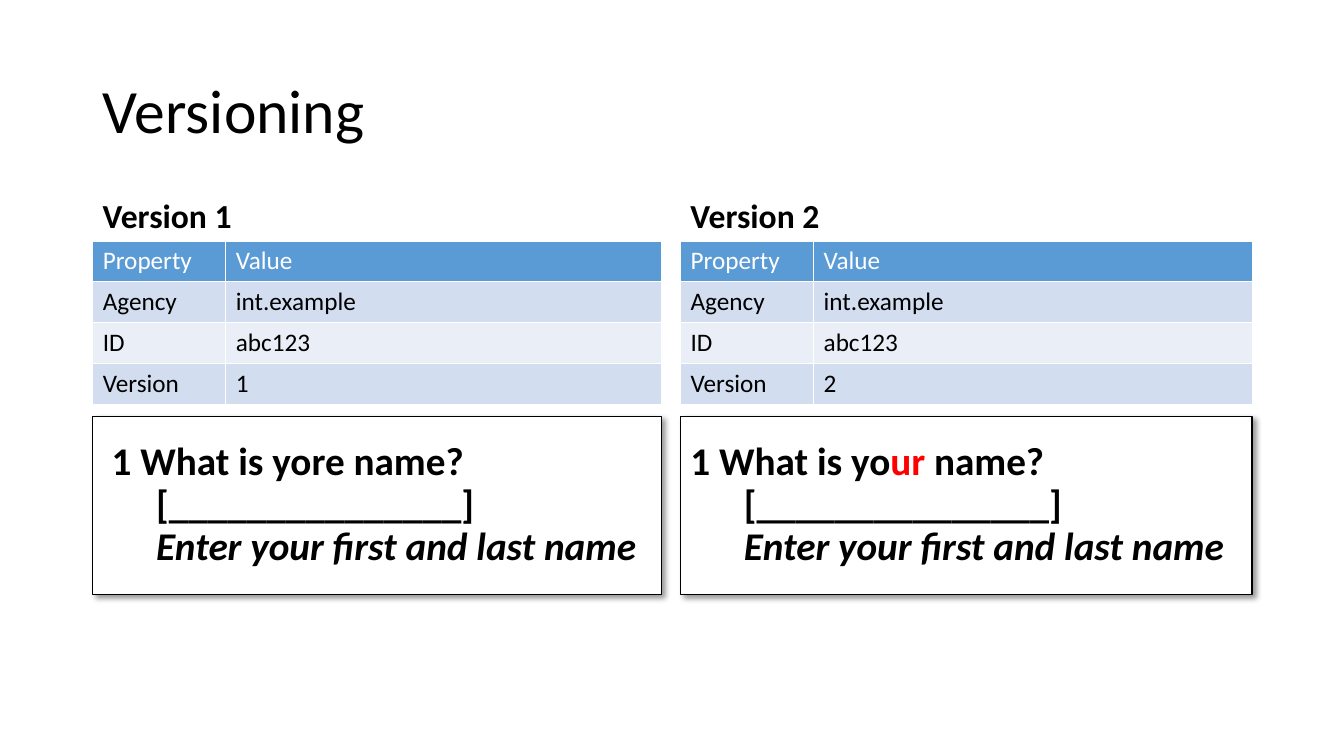
"""Build a slide that compares two versions of a survey question."""
from lxml import etree
from pptx import Presentation, util as u
from pptx.dml.color import RGBColor
from pptx.enum import shapes, text
from pptx.oxml import ns

COLOURS = {
    "black": "000000",
    "white": "FFFFFF",
    "red": "FF0000",
    "header": "5B9BD5",
    "odd_row": "D2DEEF",
    "even_row": "EAEFF7",
}
FONT = "Calibri"
PROPERTY_WIDTH = 1.32
HANGING = 0.53
BLANK = ("[_______________]", {})
HINT = ("Enter your first and last name", {"italic": True})


def colour(name):
    return RGBColor.from_string(COLOURS[name])


def style_run(run, size, name="black", bold=False, italic=False):
    font = run.font
    font.name, font.size = FONT, u.Pt(size)
    font.bold, font.italic = bold, italic
    font.color.rgb = colour(name)


def prepare_frame(shape, anchor, space_before=0):
    frame = shape.text_frame
    frame.word_wrap = True
    frame.auto_size = text.MSO_AUTO_SIZE.NONE
    frame.vertical_anchor = anchor
    paragraph = frame.paragraphs[0]
    paragraph.alignment = text.PP_ALIGN.LEFT
    paragraph.line_spacing = 0.9
    paragraph.space_before = u.Pt(space_before)
    return paragraph


def add_title(slide, words):
    title = slide.shapes.title
    title.left, title.top = u.Inches(0.92), u.Inches(0.4)
    title.width, title.height = u.Inches(11.5), u.Inches(1.45)
    title.text_frame.text = words
    paragraph = prepare_frame(title, text.MSO_ANCHOR.MIDDLE)
    style_run(paragraph.runs[0], 44)


def add_heading(slide, words, left, width):
    box = slide.shapes.add_textbox(
        u.Inches(left), u.Inches(1.49), u.Inches(width), u.Inches(0.9))
    box.text_frame.text = words
    paragraph = prepare_frame(box, text.MSO_ANCHOR.BOTTOM, 10)
    style_run(paragraph.runs[0], 24, bold=True)


def add_property_table(slide, rows, left, width):
    height = u.Inches(1.62)
    table = slide.shapes.add_table(
        len(rows), 2, u.Inches(left), u.Inches(2.39), u.Inches(width), height).table
    table.columns[0].width = u.Inches(PROPERTY_WIDTH)
    table.columns[1].width = u.Inches(width - PROPERTY_WIDTH)
    for row_index, values in enumerate(rows):
        table.rows[row_index].height = height // len(rows)
        band = "odd_row" if row_index % 2 else "even_row"
        for column_index, value in enumerate(values):
            cell = table.cell(row_index, column_index)
            cell.fill.solid()
            cell.fill.fore_color.rgb = colour(band if row_index else "header")
            cell.text_frame.text = value
            run = cell.text_frame.paragraphs[0].runs[0]
            style_run(run, 18, "black" if row_index else "white")


def add_shadow(shape):
    effects = etree.SubElement(shape._element.spPr, ns.qn("a:effectLst"))
    shadow = etree.SubElement(
        effects, ns.qn("a:outerShdw"), blurRad=str(u.Pt(4)), dist=str(u.Pt(3)),
        dir="2700000", algn="tl", rotWithShape="0")
    shade = etree.SubElement(shadow, ns.qn("a:srgbClr"), val=COLOURS["black"])
    etree.SubElement(shade, ns.qn("a:alpha"), val="40000")


def add_question(slide, lines, left, width, first_indent):
    box = slide.shapes.add_shape(
        shapes.MSO_SHAPE.RECTANGLE, u.Inches(left), u.Inches(4.13),
        u.Inches(width), u.Inches(1.77))
    box.fill.solid()
    box.fill.fore_color.rgb = colour("white")
    box.line.color.rgb = colour("black")
    box.line.width = u.Pt(1)
    add_shadow(box)
    paragraph = prepare_frame(box, text.MSO_ANCHOR.MIDDLE, 10)
    properties = paragraph._p.get_or_add_pPr()
    properties.set("marL", str(u.Inches(HANGING)))
    properties.set("indent", str(u.Inches(first_indent - HANGING)))
    for index, pieces in enumerate(lines):
        if index:
            paragraph.add_line_break()
        for words, emphasis in pieces:
            run = paragraph.add_run()
            run.text = words
            style_run(run, 28, bold=True, **emphasis)


def add_version(slide, number, left, width, question, first_indent):
    rows = [("Property", "Value"), ("Agency", "int.example"),
            ("ID", "abc123"), ("Version", number)]
    add_heading(slide, f"Version {number}", left, width)
    add_question(slide, [question, [BLANK], [HINT]], left, width, first_indent)
    add_property_table(slide, rows, left, width)


def main():
    presentation = Presentation()
    presentation.slide_width = u.Inches(13.33)
    presentation.slide_height = u.Inches(7.5)
    slide = presentation.slides.add_slide(presentation.slide_layouts[5])
    add_title(slide, "Versioning")
    add_version(slide, "1", 0.92, 5.64, [("1 What is yore name?", {})], 0.09)
    corrected = [("1 What is yo", {}), ("ur ", {"name": "red"}), ("name?", {})]
    add_version(slide, "2", 6.75, 5.67, corrected, 0)
    presentation.save("out.pptx")


if __name__ == "__main__":
    main()
